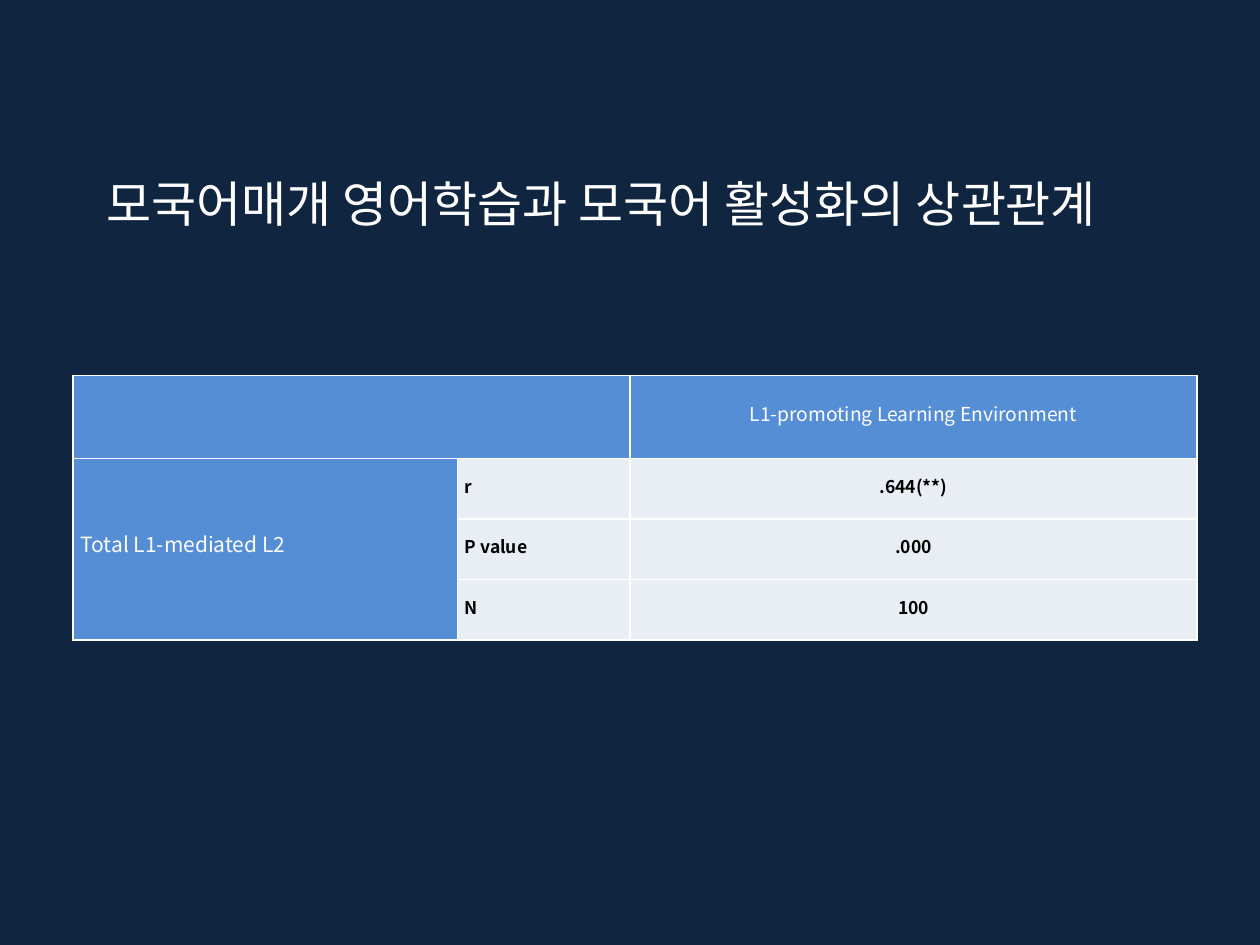
from lxml import etree
from pptx import Presentation
from pptx import util as u
from pptx.dml.color import RGBColor
from pptx.enum import text
from pptx.oxml import ns

FONT = "Noto Sans CJK KR"
WHITE, BLACK, BLUE, PALE, NAVY = "FFFFFF", "000000", "558ED5", "E9EDF4", "10253F"
CENTER, JUSTIFY = text.PP_ALIGN.CENTER, text.PP_ALIGN.JUSTIFY


def paint(fill, color):
    fill.solid()
    fill.fore_color.rgb = RGBColor.from_string(color)


def write(frame, words, size, color=WHITE, bold=False, align=None, line=None, after=None):
    paragraph = frame.paragraphs[0]
    paragraph.alignment = align
    paragraph.line_spacing = line
    paragraph.space_after = after
    run = paragraph.add_run()
    run.text = words
    run.font.size = u.Pt(size)
    run.font.bold = bold
    run.font.name = FONT
    paint(run.font.fill, color)
    # Korean letters take the East Asian font
    etree.SubElement(run.font._element, ns.qn("a:ea"), typeface=FONT)


presentation = Presentation()
presentation.slide_width = u.Inches(10)
presentation.slide_height = u.Inches(7.5)
slide = presentation.slides.add_slide(presentation.slide_layouts[6])
paint(slide.background.fill, NAVY)

# Correlation table
column_widths = [3.05, 1.37, 4.5]
row_heights = [0.66, 0.48, 0.48, 0.48]
rows = [
    ["", "", "L1-promoting Learning Environment"],
    ["Total L1-mediated L2", "r", ".644(**)"],
    ["", "P value", ".000"],
    ["", "N", "100"],
]
table = slide.shapes.add_table(
    len(rows), len(column_widths), u.Inches(0.58), u.Inches(2.98),
    u.Inches(sum(column_widths)), u.Inches(sum(row_heights))).table
for column, width in zip(table.columns, column_widths):
    column.width = u.Inches(width)
for row, height in zip(table.rows, row_heights):
    row.height = u.Inches(height)

for row_index, row in enumerate(rows):
    for column_index, words in enumerate(row):
        cell = table.cell(row_index, column_index)
        is_header = row_index == 0 or column_index == 0
        cell.margin_left = cell.margin_right = u.Inches(0.06)
        cell.margin_top = cell.margin_bottom = 0
        cell.vertical_anchor = text.MSO_ANCHOR.MIDDLE

        # White cell borders come before the fill
        properties = cell._tc.get_or_add_tcPr()
        for side in ("lnL", "lnR", "lnT", "lnB"):
            border = etree.SubElement(properties, ns.qn("a:" + side), w=str(u.Pt(1)))
            solid = etree.SubElement(border, ns.qn("a:solidFill"))
            etree.SubElement(solid, ns.qn("a:srgbClr"), val=WHITE)
        paint(cell.fill, BLUE if is_header else PALE)

        if words:
            size = 11 if row_index == 0 else 12 if column_index == 0 else 10
            write(cell.text_frame, words, size,
                  color=WHITE if is_header else BLACK, bold=not is_header,
                  align=CENTER if column_index == 2 else JUSTIFY,
                  line=u.Pt(11), after=u.Pt(10))

table.cell(0, 0).merge(table.cell(0, 1))
table.cell(1, 0).merge(table.cell(3, 0))

# Title
title = slide.shapes.add_textbox(u.Inches(0.75), u.Inches(1.33), u.Inches(9), u.Inches(0.57))
title.text_frame.word_wrap = True
title.text_frame.auto_size = text.MSO_AUTO_SIZE.SHAPE_TO_FIT_TEXT
write(title.text_frame, "모국어매개 영어학습과 모국어 활성화의 상관관계", 28)

presentation.save("out.pptx")
